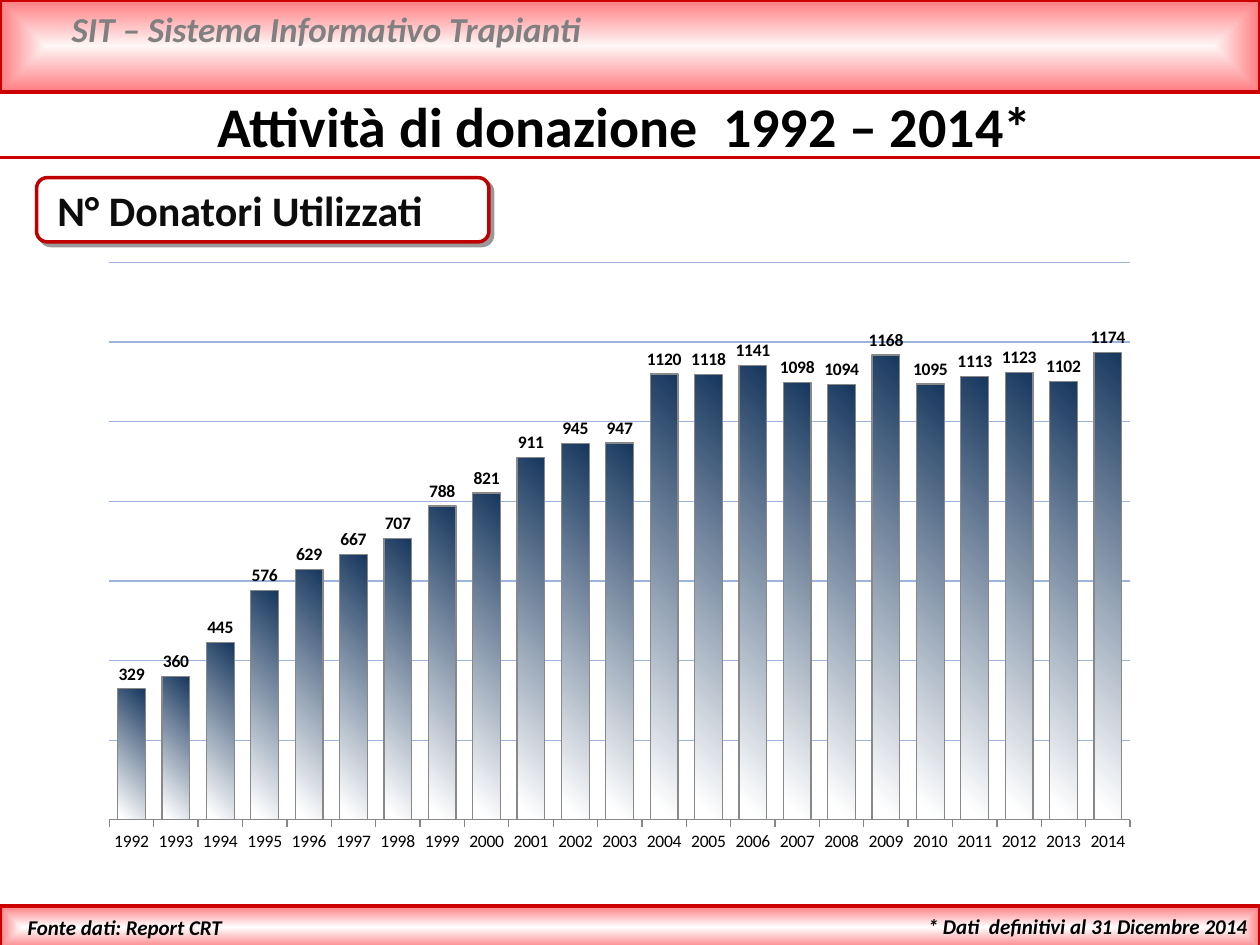
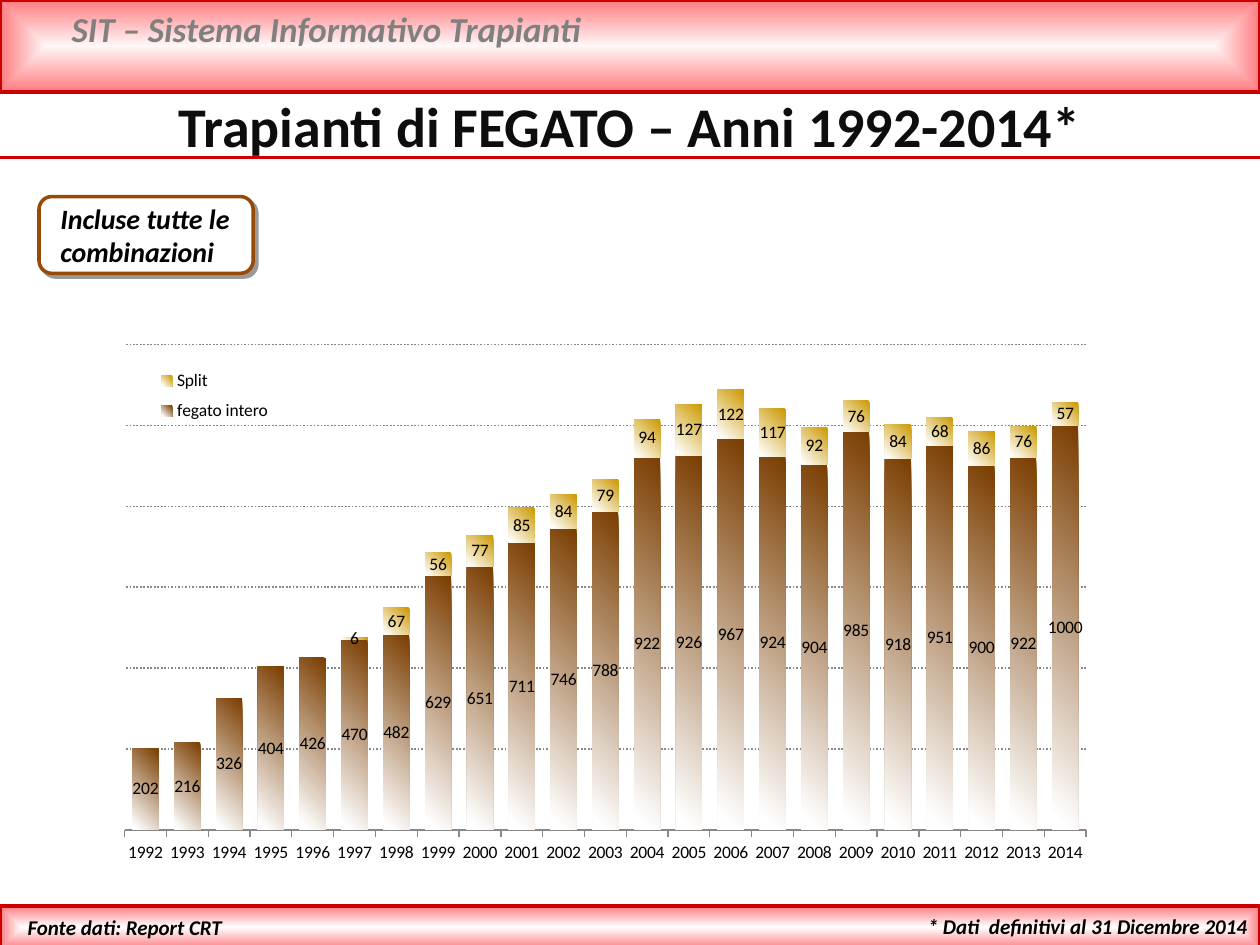
"""Build two slides on organ donation and liver transplants, 1992-2014."""
import pptx
import pptx.chart.data
import pptx.dml.color
import pptx.enum.chart
import pptx.enum.dml
import pptx.enum.shapes
import pptx.enum.text
import pptx.oxml
import pptx.oxml.ns
import pptx.util
from pptx.dml.color import RGBColor
from pptx.enum.chart import XL_CHART_TYPE, XL_LABEL_POSITION
from pptx.util import Inches, Pt

FONT = "Calibri"
BLACK = RGBColor(0x00, 0x00, 0x00)
INK = RGBColor(0x0D, 0x0D, 0x0D)
WHITE = RGBColor(0xFF, 0xFF, 0xFF)
GREY = RGBColor(0x80, 0x80, 0x80)
AXIS = RGBColor(0x88, 0x88, 0x88)
RED = RGBColor(0xCC, 0x00, 0x00)
DARK_RED = RGBColor(0xC0, 0x00, 0x00)
PINK = RGBColor(0xFF, 0x7C, 0x80)
PALE_PINK = RGBColor(0xFF, 0xF6, 0xF6)
GRID_BLUE = RGBColor(0x9C, 0xB3, 0xDC)
NAVY = RGBColor(0x17, 0x37, 0x5E)
RUST = RGBColor(0x98, 0x48, 0x07)
BROWN = RGBColor(0x7A, 0x3D, 0x00)
GOLD = RGBColor(0xCC, 0x99, 0x00)

YEARS = [str(year) for year in range(1992, 2015)]
DONORS = [329, 360, 445, 576, 629, 667, 707, 788, 821, 911, 945, 947, 1120,
          1118, 1141, 1098, 1094, 1168, 1095, 1113, 1123, 1102, 1174]
WHOLE_LIVER = [202, 216, 326, 404, 426, 470, 482, 629, 651, 711, 746, 788, 922,
               926, 967, 924, 904, 985, 918, 951, 900, 922, 1000]
SPLIT_LIVER = [None] * 5 + [6, 67, 56, 77, 85, 84, 79, 94, 127, 122, 117, 92,
                            76, 84, 68, 86, 76, 57]


def inches(*lengths):
    """Convert several lengths to Inches."""
    return [Inches(length) for length in lengths]


def xml(text):
    """Parse an XML fragment in the drawing and chart namespaces."""
    head, tail = text.split(">", 1)
    slash = "/" if head.endswith("/") else ""
    spaces = pptx.oxml.ns.nsdecls("a", "c")
    return pptx.oxml.parse_xml(f"{head.rstrip('/')} {spaces}{slash}>{tail}")


def write(tf, text, size, color, italic=False, align=None):
    """Write one bold run into the first paragraph."""
    tf.word_wrap = True
    p = tf.paragraphs[0]
    p.alignment = align
    r = p.add_run()
    r.text = text
    font = r.font
    font.name, font.size, font.bold, font.italic = FONT, Pt(size), True, italic
    font.color.rgb = color


def set_gradient(fill, start, end, end_position):
    """Give a fill two gradient stops running down to the lower left."""
    fill.gradient()
    fill.gradient_angle = 225
    first, last = fill.gradient_stops
    first.color.rgb, first.position = start, 0
    last.color.rgb, last.position = end, end_position


def add_text(s, box, text, size, color, align=None):
    """Add an italic text box."""
    sp = s.shapes.add_textbox(*inches(*box))
    write(sp.text_frame, text, size, color, True, align)
    return sp


def add_band(s, top, height, center):
    """Add a full-width band, light in the middle and pink at its edges."""
    sp = s.shapes.add_shape(pptx.enum.shapes.MSO_SHAPE.RECTANGLE,
                            *inches(0, top, 10, height))
    sp.shadow.inherit = False
    set_gradient(sp.fill, center, PINK, 1)
    lin = sp.element.spPr.find(".//" + pptx.oxml.ns.qn("a:lin"))
    lin.getparent().replace(lin, xml(
        '<a:path path="rect"><a:fillToRect l="50000" t="50000" r="50000" b="50000"/></a:path>'))
    sp.line.color.rgb, sp.line.width = RED, Pt(2)
    return sp


def add_rule(s, y):
    """Add the red line under the title."""
    line = s.shapes.add_connector(pptx.enum.shapes.MSO_CONNECTOR.STRAIGHT,
                                  *inches(0, y, 10, y))
    line.line.color.rgb, line.line.width = RED, Pt(2)
    line.element.spPr.append(xml("<a:effectLst/>"))
    return line


def add_frame(layout, s):
    """Draw the bands, rule and footers and move them to the layout."""
    right = pptx.enum.text.PP_ALIGN.RIGHT
    frame = [
        add_band(s, 0, 0.73, PALE_PINK),
        add_text(s, (0.47, 0.01, 8.98, 0.44),
                 "SIT – Sistema Informativo Trapianti", 20, GREY),
        add_band(s, 7.19, 0.34, WHITE),
        add_rule(s, 1.25),
        add_text(s, (5.87, 7.2, 4.13, 0.3),
                 "* Dati  definitivi al 31 Dicembre 2014", 12, BLACK, right),
        add_text(s, (0.12, 7.21, 3.21, 0.3), "Fonte dati: Report CRT", 12, BLACK),
    ]
    for number, sp in enumerate(frame, 100):
        sp.element.xpath(".//p:cNvPr")[0].set("id", str(number))
        layout.shapes.element.append(sp.element)


def set_title(s, text, color, width):
    """Place and write the slide title."""
    sp = s.shapes.title
    sp.left, sp.top, sp.width, sp.height = inches(0, 0.67, width, 0.64)
    sp.text_frame.auto_size = pptx.enum.text.MSO_AUTO_SIZE.NONE
    write(sp.text_frame, text, 32, color, align=pptx.enum.text.PP_ALIGN.CENTER)


def add_badge(s, box, text, size, color, border, italic=False):
    """Add a rounded, shadowed label."""
    sp = s.shapes.add_shape(pptx.enum.shapes.MSO_SHAPE.ROUNDED_RECTANGLE, *inches(*box))
    sp.fill.solid()
    sp.fill.fore_color.rgb = WHITE
    sp.line.color.rgb, sp.line.width = border, Pt(2)
    sp.shadow.inherit = False
    sp.element.spPr.find(pptx.oxml.ns.qn("a:effectLst")).append(xml(
        '<a:outerShdw dist="38100" dir="2700000"><a:srgbClr val="000000">'
        '<a:alpha val="40000"/></a:srgbClr></a:outerShdw>'))
    tf = sp.text_frame
    tf.margin_left, tf.margin_right, tf.margin_top, tf.margin_bottom = inches(0.14, 0.05, 0, 0)
    write(tf, text, size, color, italic, pptx.enum.text.PP_ALIGN.LEFT)


def manual_layout(x, y, w, h, inner=False):
    """Return a chart layout given as fractions of the chart."""
    target = '<c:layoutTarget val="inner"/>' if inner else ""
    return xml(f'<c:layout><c:manualLayout>{target}<c:xMode val="edge"/><c:yMode val="edge"/>'
               f'<c:x val="{x}"/><c:y val="{y}"/><c:w val="{w}"/><c:h val="{h}"/>'
               '</c:manualLayout></c:layout>')


def add_columns(s, kind, box, series, plot_box, top_value, overlap, label_position):
    """Add a yearly column chart; series holds (name, values, colour)."""
    data = pptx.chart.data.CategoryChartData()
    data.categories = YEARS
    for name, values, _ in series:
        data.add_series(name, values)
    chart = s.shapes.add_chart(kind, *inches(*box), data).chart
    chart.has_title = chart.has_legend = False
    chart.font.name, chart.font.size = FONT, Pt(10)
    chart.font.color.rgb = BLACK
    plot = chart.plots[0]
    plot.vary_by_categories = False
    plot.gap_width, plot.overlap = 60, overlap
    plot.has_data_labels = True
    labels = plot.data_labels
    labels.show_value, labels.position = True, label_position
    labels.font.size = Pt(10)
    for item, (_, _, color) in zip(plot.series, series):
        item.invert_if_negative = False
        set_gradient(item.format.fill, color, WHITE, 0.96)
    axis = chart.value_axis
    axis.minimum_scale, axis.maximum_scale, axis.major_unit = 0, top_value, 200
    axis.has_major_gridlines = True
    axis.visible = False
    chart.category_axis.major_tick_mark = pptx.enum.chart.XL_TICK_MARK.OUTSIDE
    chart.category_axis.format.line.color.rgb = AXIS
    area = chart.element.find(".//" + pptx.oxml.ns.qn("c:plotArea"))
    for old in area.findall(pptx.oxml.ns.qn("c:layout")):
        area.remove(old)
    area.insert(0, manual_layout(*plot_box, inner=True))
    return chart


def style_grid(chart, color, width, dash=None):
    """Style the horizontal gridlines."""
    line = chart.value_axis.major_gridlines.format.line
    line.color.rgb, line.width, line.dash_style = color, Pt(width), dash


def add_legend(chart, box):
    """Lay the legend over the plot."""
    chart.has_legend = True
    legend = chart.legend
    legend.position = pptx.enum.chart.XL_LEGEND_POSITION.LEFT
    legend.include_in_layout = False
    legend.font.size = Pt(10)
    for old in legend._element.findall(pptx.oxml.ns.qn("c:layout")):
        legend._element.remove(old)
    position = legend._element.find(pptx.oxml.ns.qn("c:legendPos"))
    position.addnext(manual_layout(*box))


def donors_slide(s):
    """Fill the slide on donors."""
    set_title(s, "Attività di donazione  1992 – 2014*", BLACK, 9.92)
    chart = add_columns(s, XL_CHART_TYPE.COLUMN_CLUSTERED, (0.75, 1.92, 8.43, 4.97),
                        [("Donatori utilizzati", DONORS, NAVY)],
                        (0.014, 0.033, 0.961, 0.89), 1400, -20,
                        XL_LABEL_POSITION.OUTSIDE_END)
    style_grid(chart, GRID_BLUE, 0.75)
    chart.plots[0].data_labels.font.bold = True
    outline = chart.plots[0].series[0].format.line
    outline.color.rgb, outline.width = AXIS, Pt(0.75)
    add_badge(s, (0.29, 1.41, 3.59, 0.51), "N° Donatori Utilizzati", 24, INK, DARK_RED)


def liver_slide(s):
    """Fill the slide on liver transplants."""
    set_title(s, "Trapianti di FEGATO – Anni 1992-2014*", INK, 10)
    add_badge(s, (0.31, 1.56, 1.7, 0.61), "Incluse tutte le combinazioni", 16,
              BLACK, RUST, True)
    chart = add_columns(s, XL_CHART_TYPE.COLUMN_STACKED, (0.83, 2.65, 7.95, 4.28),
                        [("fegato intero", WHOLE_LIVER, BROWN),
                         ("Split", SPLIT_LIVER, GOLD)],
                        (0.02, 0.02, 0.96, 0.9), 1200, 100, XL_LABEL_POSITION.CENTER)
    style_grid(chart, AXIS, 1, pptx.enum.dml.MSO_LINE.ROUND_DOT)
    add_legend(chart, (0.04, 0.05, 0.14, 0.13))


def main():
    """Build and save the deck."""
    prs = pptx.Presentation()
    prs.slide_width, prs.slide_height = inches(10, 7.5)
    layout = prs.slide_layouts[5]
    donors, liver = [prs.slides.add_slide(layout) for _ in range(2)]
    add_frame(layout, donors)
    donors_slide(donors)
    liver_slide(liver)
    prs.save("out.pptx")


if __name__ == "__main__":
    main()
